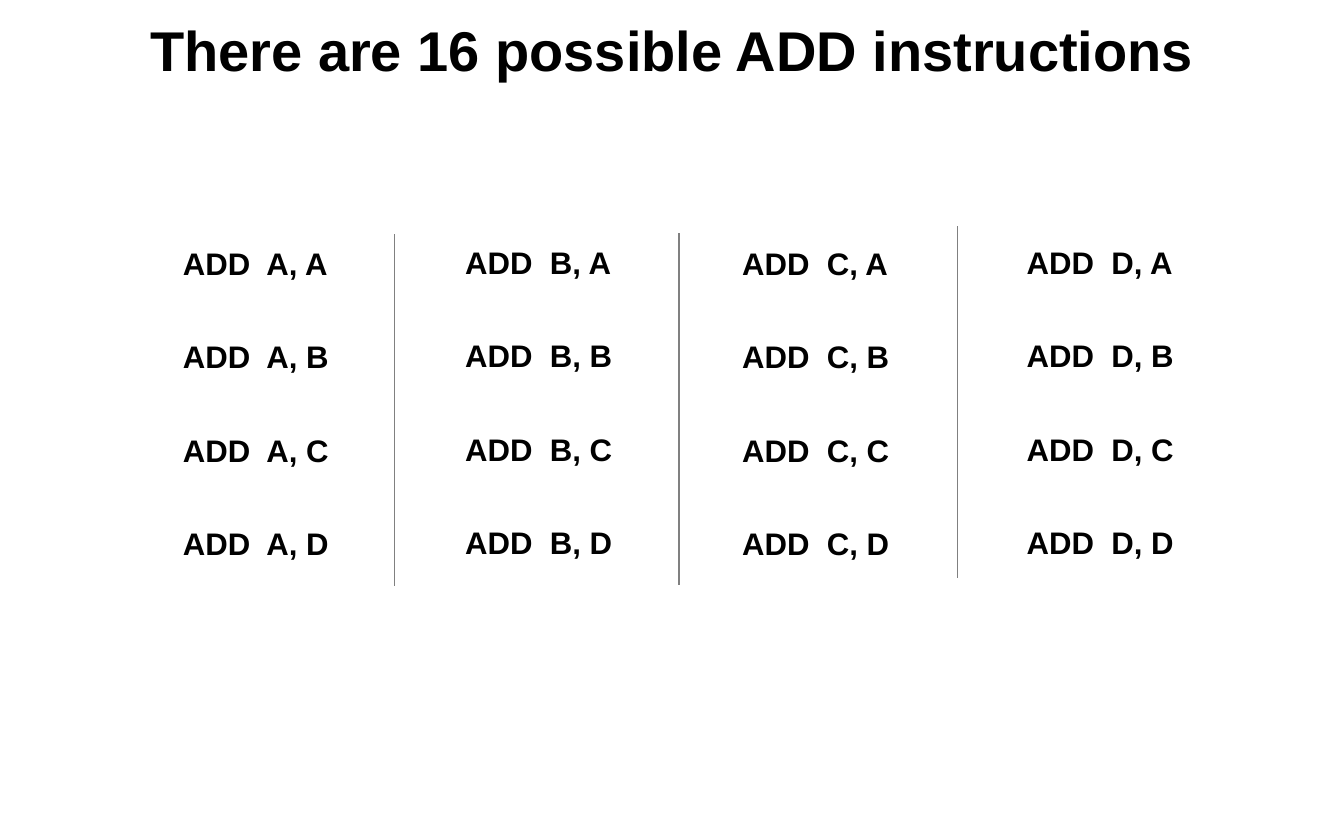
from lxml import etree
from pptx import Presentation
from pptx import util as u
from pptx.dml.color import RGBColor
from pptx.enum import shapes, text
from pptx.oxml import ns

Pt = u.Pt
BLACK = RGBColor(0x00, 0x00, 0x00)
GRAY = RGBColor(0x80, 0x80, 0x80)


class Deck:
    """Style and current slide, with one method per kind of element."""

    font = "Arial"
    inset = 7.2

    def __init__(self, s):
        self.s = s

    def label(self, words, x, y, w, h, size, align, indent=0, before=0,
              anchor=text.MSO_ANCHOR.MIDDLE, top_inset=inset):
        sp = self.s.shapes.add_textbox(Pt(x), Pt(y), Pt(w), Pt(h))
        tf = sp.text_frame
        tf.word_wrap = True
        tf.vertical_anchor = anchor
        tf.margin_left = tf.margin_right = tf.margin_bottom = Pt(self.inset)
        tf.margin_top = Pt(top_inset)
        p = tf.paragraphs[0]
        p.alignment = align
        p.space_before = Pt(before)
        p._p.get_or_add_pPr().set("marL", str(Pt(indent)))
        r = p.add_run()
        r.text = words
        r.font.name = self.font
        r.font.size = Pt(size)
        r.font.bold = True
        r.font.color.rgb = BLACK

    def divider(self, x, y, length):
        c = self.s.shapes.add_connector(
            shapes.MSO_CONNECTOR.STRAIGHT, Pt(x), Pt(y), Pt(x), Pt(y + length))
        c.line.color.rgb = GRAY
        c.line.width = Pt(0.75)
        etree.SubElement(c._element.spPr, ns.qn("a:effectLst"))


def main():
    prs = Presentation()
    prs.slide_width, prs.slide_height = Pt(864), Pt(540)
    deck = Deck(prs.slides.add_slide(prs.slide_layouts[6]))

    # Title
    deck.label("There are 16 possible ADD instructions", 72, -1.5, 720, 54, 36,
               text.PP_ALIGN.CENTER, anchor=text.MSO_ANCHOR.TOP, top_inset=11.5)

    # One column per first register, one row per second register
    registers = "ABCD"
    row_pitch = 60
    columns = [(98.5, 151.2), (280, 150.5), (458, 151.2), (641, 150.5)]
    for first, (x, top) in zip(registers, columns):
        for row, second in enumerate(registers):
            deck.label(f"ADD  {first}, {second}", x, top + row * row_pitch,
                       132.5, 36, 20, text.PP_ALIGN.LEFT, indent=12, before=4.8)

    # Dividers between the columns
    for x, y in [(253.5, 150.5), (436.5, 150), (615.75, 145.5)]:
        deck.divider(x, y, 226)

    prs.save("out.pptx")


if __name__ == "__main__":
    main()
